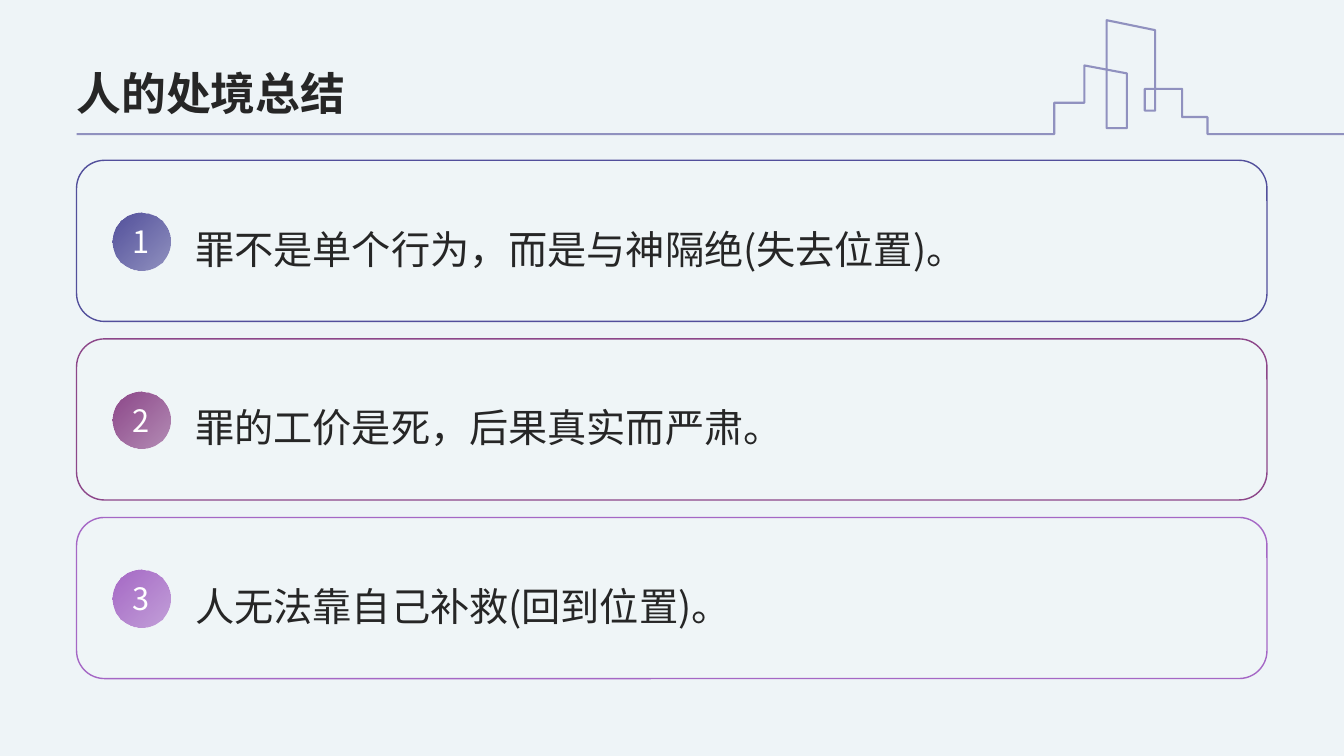
"""Build a summary slide with three numbered statement cards under a skyline rule."""
import dataclasses

import lxml.etree
import pptx
import pptx.dml.color
import pptx.enum.shapes
import pptx.enum.text
import pptx.oxml.ns
import pptx.util
from pptx.util import Cm


@dataclasses.dataclass(frozen=True)
class Theme:
    font: str = "Noto Sans CJK SC"
    background: str = "EEF4F7"
    text: str = "262626"
    white: str = "FFFFFF"
    accents: tuple = ("524F9B", "8C4689", "A567C5")
    title_size: int = 32
    body_size: int = 28
    badge_size: int = 22


def set_color(color, value, opacity=100):
    color.rgb = pptx.dml.color.RGBColor.from_string(value)
    if opacity < 100:
        element = color._xFill if hasattr(color, "_xFill") else color._color._xClr
        if not element.tag.endswith("srgbClr"):
            element = element.find(pptx.oxml.ns.qn("a:srgbClr"))
        alpha = lxml.etree.SubElement(element, pptx.oxml.ns.qn("a:alpha"))
        alpha.set("val", str(opacity * 1000))


def add_run(paragraph, text, size, color, bold=False):
    run = paragraph.add_run()
    run.text = text
    run.font.name = theme.font
    run.font.size = pptx.util.Pt(size)
    run.font.bold = bold
    set_color(run.font.color, color)
    east_asian = lxml.etree.Element(pptx.oxml.ns.qn("a:ea"), typeface=theme.font)
    run.font._element.find(pptx.oxml.ns.qn("a:latin")).addnext(east_asian)


theme = Theme()
statements = (
    "罪不是单个行为，而是与神隔绝(失去位置)。",
    "罪的工价是死，后果真实而严肃。",
    "人无法靠自己补救(回到位置)。",
)
left, width = Cm(1.93), Cm(30)
card_top, card_height, card_pitch = Cm(4.04), Cm(4.06), Cm(4.5)
badge_diameter = Cm(1.45)

presentation = pptx.Presentation()
presentation.slide_width = Cm(33.87)
presentation.slide_height = Cm(19.05)
slide = presentation.slides.add_slide(presentation.slide_layouts[5])
slide.background.fill.solid()
set_color(slide.background.fill.fore_color, theme.background)

title = slide.shapes.title
title.left, title.top, title.width, title.height = left, Cm(0.99), width, Cm(2.01)
frame = title.text_frame
frame.margin_left = frame.margin_right = frame.margin_top = frame.margin_bottom = 0
frame.vertical_anchor = pptx.enum.text.MSO_ANCHOR.BOTTOM
frame.paragraphs[0].alignment = pptx.enum.text.PP_ALIGN.LEFT
add_run(frame.paragraphs[0], "人的处境总结", theme.title_size, theme.text, bold=True)

skyline_points = (
    (33.87, 3.38), (30.43, 3.38), (30.43, 2.95), (29.79, 2.95), (29.79, 2.24),
    (28.85, 2.24), (28.85, 2.79), (29.11, 2.79), (29.11, 0.76), (27.89, 0.51),
    (27.89, 3.23), (28.4, 3.23), (28.4, 1.85), (27.33, 1.65), (27.33, 2.59),
    (26.57, 2.59), (26.57, 3.38), (1.93, 3.38),
)
vertices = [(Cm(x), Cm(y)) for x, y in skyline_points]
builder = slide.shapes.build_freeform(*vertices[0])
builder.add_line_segments(vertices[1:], close=False)
skyline = builder.convert_to_shape()
skyline.shadow.inherit = False
skyline.fill.background()
skyline.line.width = pptx.util.Pt(1.5)
set_color(skyline.line.color, theme.accents[0], 60)

for index, (statement, accent) in enumerate(zip(statements, theme.accents)):
    top = card_top + index * card_pitch
    card = slide.shapes.add_shape(
        pptx.enum.shapes.MSO_SHAPE.ROUNDED_RECTANGLE, left, top, width, card_height)
    card.adjustments[0] = 0.173
    card.shadow.inherit = False
    card.fill.solid()
    set_color(card.fill.fore_color, theme.white, 10)
    card.line.width = pptx.util.Pt(1)
    set_color(card.line.color, accent)
    frame = card.text_frame
    frame.word_wrap = True
    frame.vertical_anchor = pptx.enum.text.MSO_ANCHOR.MIDDLE
    frame.margin_left, frame.margin_right = Cm(2.79), Cm(0.51)
    frame.margin_top, frame.margin_bottom = 0, Cm(0.2)
    paragraph = frame.paragraphs[0]
    paragraph.alignment = pptx.enum.text.PP_ALIGN.LEFT
    paragraph.line_spacing = 1.5
    add_run(paragraph, statement, theme.body_size, theme.text)

    badge = slide.shapes.add_shape(
        pptx.enum.shapes.MSO_SHAPE.OVAL, Cm(2.84), top + Cm(1.32),
        badge_diameter, badge_diameter)
    badge.shadow.inherit = False
    badge.line.fill.background()
    badge.fill.gradient()
    badge.fill.gradient_angle = 315
    for stop, opacity in zip(badge.fill.gradient_stops, (100, 59)):
        set_color(stop.color, accent, opacity)
    frame = badge.text_frame
    frame.word_wrap = False
    frame.vertical_anchor = pptx.enum.text.MSO_ANCHOR.MIDDLE
    paragraph = frame.paragraphs[0]
    paragraph.alignment = pptx.enum.text.PP_ALIGN.CENTER
    add_run(paragraph, str(index + 1), theme.badge_size, theme.white)

presentation.save("out.pptx")
